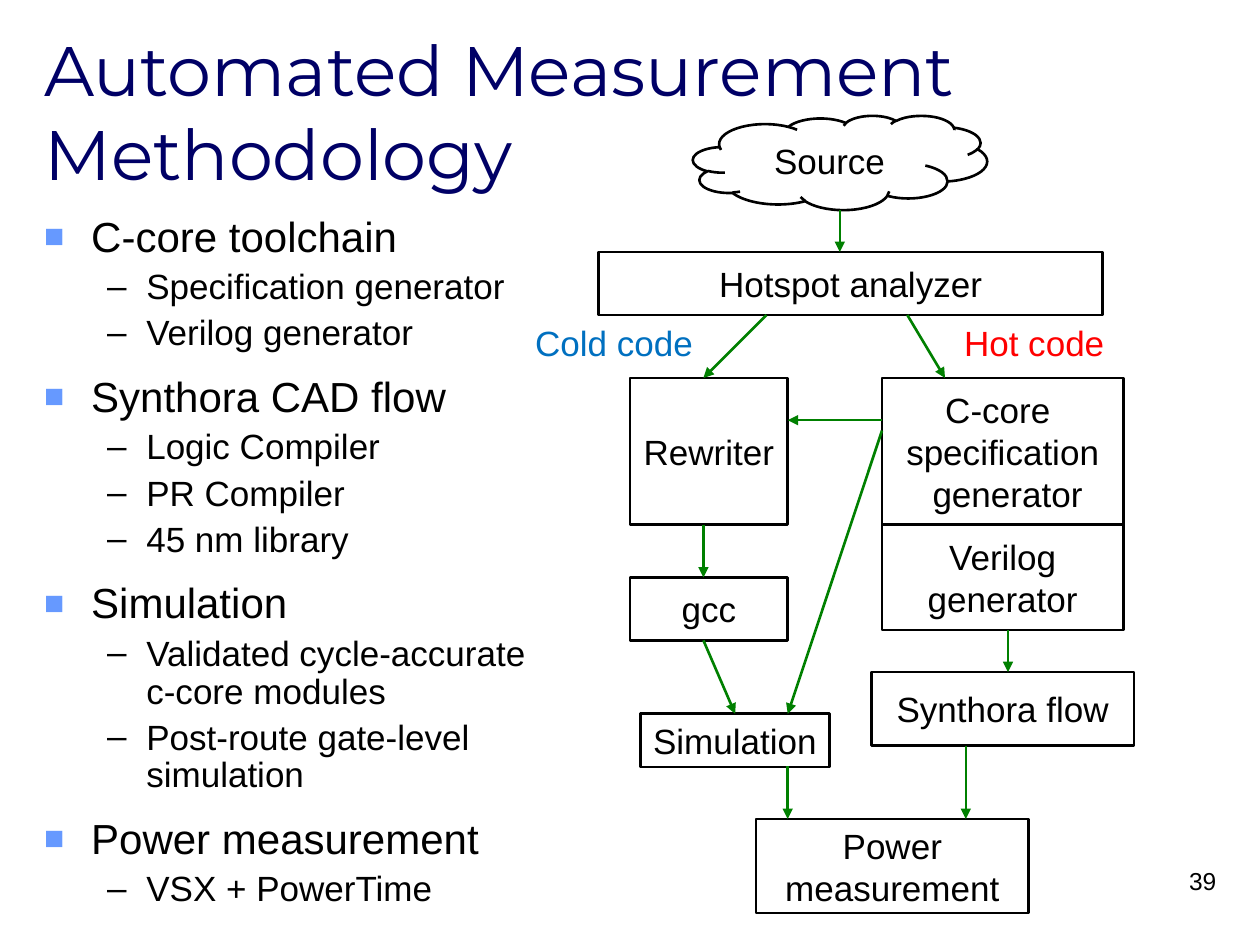
from lxml import etree
from pptx import Presentation
from pptx.dml.color import RGBColor
from pptx.enum.shapes import MSO_CONNECTOR, MSO_SHAPE
from pptx.enum.text import MSO_ANCHOR, MSO_AUTO_SIZE, PP_ALIGN
from pptx.oxml.ns import qn
from pptx.util import Cm, Pt


def color(hex_value):
    return RGBColor.from_string(hex_value)


def add_run(p, text, size, hex_value="000000", font="Arial"):
    """Add text as runs, with a line break at each newline."""
    for i, line in enumerate(text.split("\n")):
        if i:
            p.add_line_break()
        r = p.add_run()
        r.text = line
        r.font.name, r.font.size = font, Pt(size)
        r.font.color.rgb = color(hex_value)


prs = Presentation()
prs.slide_width, prs.slide_height = Cm(25.4), Cm(19.05)
s = prs.slides.add_slide(prs.slide_layouts[5])

# Title
title = s.shapes.title
title.left, title.top, title.width, title.height = Cm(0.64), Cm(0.64), Cm(24.2), Cm(3.18)
tf = title.text_frame
tf.auto_size = MSO_AUTO_SIZE.NONE
tf.vertical_anchor = MSO_ANCHOR.MIDDLE
p = tf.paragraphs[0]
p.alignment = PP_ALIGN.LEFT
add_run(p, "Automated Measurement Methodology", 40, "000066", "Montserrat")

# Bullet list
outline = [
    (0, "C-core toolchain"),
    (1, "Specification generator"),
    (1, "Verilog generator"),
    (0, "Synthora CAD flow"),
    (1, "Logic Compiler"),
    (1, "PR Compiler"),
    (1, "45 nm library"),
    (0, "Simulation"),
    (1, "Validated cycle-accurate \nc-core modules"),
    (1, "Post-route gate-level simulation"),
    (0, "Power measurement"),
    (1, "VSX + PowerTime"),
]
# Per level: text size, space before, left margin, hanging indent, bullet
levels = [(24, 13, 0.95, 0.95, "■"), (20, 4.7, 2.06, 0.79, "–")]
tf = s.shapes.add_textbox(Cm(0.64), Cm(4.23), Cm(11.88), Cm(12.7)).text_frame
tf.word_wrap = True
for i, (level, text) in enumerate(outline):
    size, before, margin, hanging, bullet = levels[level]
    p = tf.add_paragraph() if i else tf.paragraphs[0]
    p.level = level
    p.line_spacing = 0.9
    p.space_before = Pt(before if i else 0)
    pPr = p._p.get_or_add_pPr()
    pPr.set("marL", str(Cm(margin)))
    pPr.set("indent", str(-Cm(hanging)))
    if level == 0:
        bu_color = etree.SubElement(pPr, qn("a:buClr"))
        etree.SubElement(bu_color, qn("a:srgbClr"), val="6699FF")
        etree.SubElement(pPr, qn("a:buSzPct"), val="80000")
    etree.SubElement(pPr, qn("a:buFont"), typeface="Arial")
    etree.SubElement(pPr, qn("a:buChar"), char=bullet)
    add_run(p, text, size)

# Flow steps: left, top, width, height, one string per paragraph
steps = [
    (13.97, 2.33, 5.93, 1.9, ["Source"]),
    (12.07, 5.08, 10.16, 1.27, ["Hotspot analyzer"]),
    (12.7, 7.62, 3.18, 2.96, ["Rewriter"]),
    (12.7, 11.64, 3.18, 1.27, ["gcc"]),
    (17.78, 7.62, 4.87, 2.96, ["C-core ", "specification", " generator"]),
    (17.78, 10.58, 4.87, 2.12, ["Verilog\ngenerator"]),
    (17.57, 13.55, 5.29, 1.48, ["Synthora flow"]),
    (12.91, 14.39, 3.81, 1.07, ["Simulation"]),
    (15.24, 16.51, 5.5, 1.9, ["Power\nmeasurement"]),
]
for x, y, w, h, texts in steps:
    is_source = texts == ["Source"]
    kind = MSO_SHAPE.CLOUD if is_source else MSO_SHAPE.RECTANGLE
    sp = s.shapes.add_shape(kind, Cm(x), Cm(y), Cm(w), Cm(h))
    sp.shadow.inherit = False
    sp.fill.background()
    sp.line.color.rgb = color("000000")
    sp.line.width = Pt(1.5)
    tf = sp.text_frame
    tf.word_wrap = is_source
    tf.vertical_anchor = MSO_ANCHOR.MIDDLE
    for i, text in enumerate(texts):
        p = tf.add_paragraph() if i else tf.paragraphs[0]
        p.alignment = PP_ALIGN.CENTER
        add_run(p, text, 20)

# Arrows: from x, from y, to x, to y
arrows = [
    (16.93, 4.23, 16.93, 5.08),
    (15.45, 6.35, 14.18, 7.62),
    (18.29, 6.35, 19.05, 7.62),
    (17.78, 8.47, 15.88, 8.47),
    (17.78, 8.68, 15.88, 14.39),
    (14.18, 10.58, 14.18, 11.64),
    (14.18, 12.91, 14.82, 14.39),
    (20.32, 12.7, 20.32, 13.55),
    (15.88, 15.45, 15.88, 16.51),
    (19.47, 15.03, 19.47, 16.51),
]
for ends in arrows:
    arrow = s.shapes.add_connector(MSO_CONNECTOR.STRAIGHT, *map(Cm, ends))
    arrow.line.color.rgb = color("008000")
    arrow.line.width = Pt(1.5)
    etree.SubElement(arrow.line._get_or_add_ln(), qn("a:tailEnd"), type="triangle")
    etree.SubElement(arrow._element.spPr, qn("a:effectLst"))

# Branch labels and page number
labels = [
    (10.37, 6.35, 4.02, 1.11, "Cold code", 20, "0070C0", PP_ALIGN.CENTER),
    (18.84, 6.35, 4.02, 1.11, "Hot code", 20, "FF0000", PP_ALIGN.CENTER),
    (19.48, 17.34, 5.29, 1.27, "39", 14, "000000", PP_ALIGN.RIGHT),
]
for x, y, w, h, text, size, hex_value, align in labels:
    tf = s.shapes.add_textbox(Cm(x), Cm(y), Cm(w), Cm(h)).text_frame
    tf.word_wrap = True
    p = tf.paragraphs[0]
    p.alignment = align
    add_run(p, text, size, hex_value)

prs.save("out.pptx")
